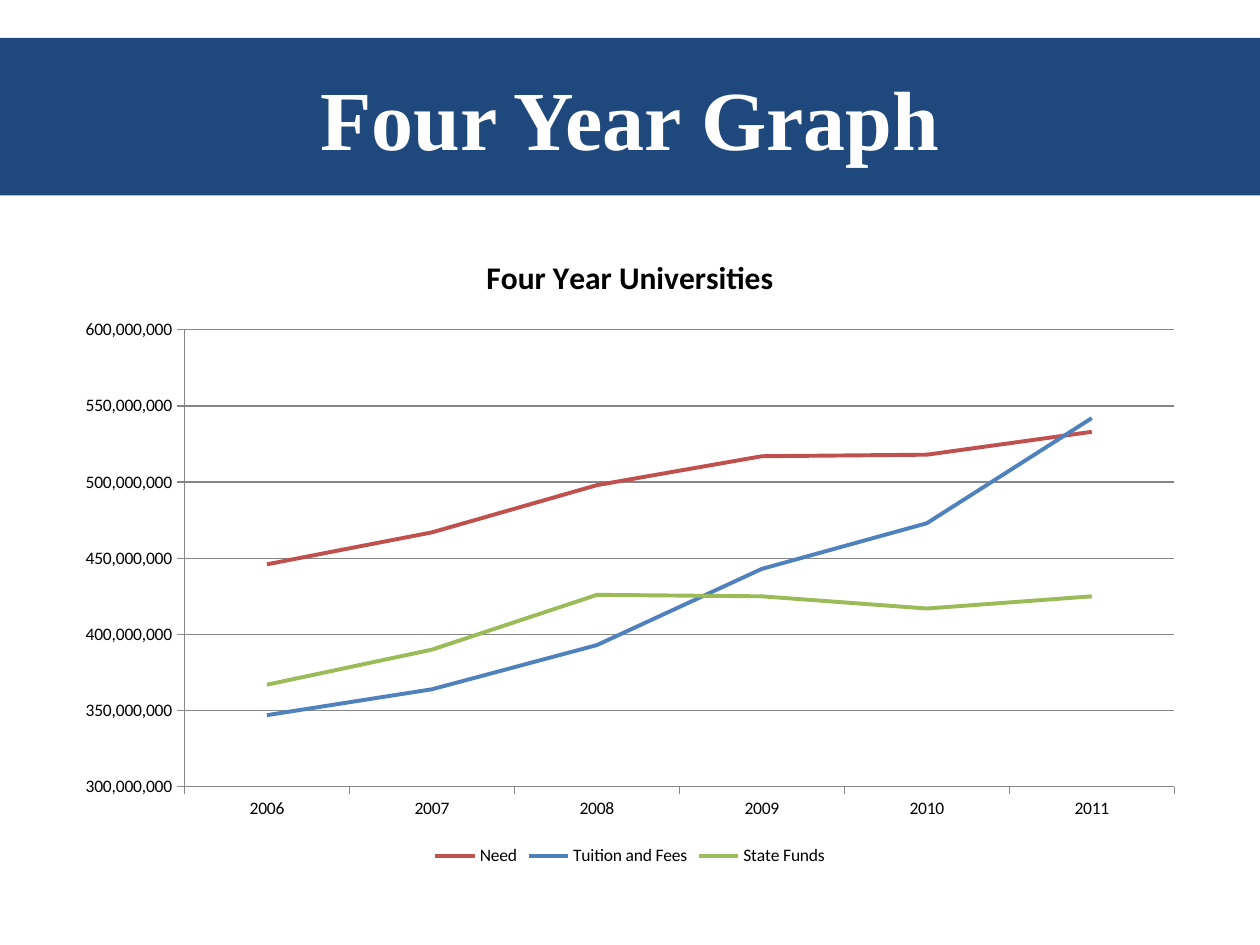
from pptx import Presentation
from pptx.chart.data import CategoryChartData
from pptx.dml.color import RGBColor
from pptx.enum.chart import XL_CHART_TYPE, XL_LEGEND_POSITION, XL_TICK_MARK
from pptx.enum.shapes import MSO_SHAPE
from pptx.enum.text import MSO_ANCHOR, PP_ALIGN
from pptx.util import Inches, Pt

LINE_CHART = XL_CHART_TYPE.LINE
BOTTOM = XL_LEGEND_POSITION.BOTTOM
TICK_OUT = XL_TICK_MARK.OUTSIDE
RECTANGLE = MSO_SHAPE.RECTANGLE
MIDDLE = MSO_ANCHOR.MIDDLE
CENTER = PP_ALIGN.CENTER

NAVY = "1F497D"
WHITE = "FFFFFF"
BLACK = "000000"
AXIS_GRAY = "868686"

YEARS = ["2006", "2007", "2008", "2009", "2010", "2011"]
MILLION = 1_000_000
# name, line colour, values in millions
FUNDING = [
    ("Need", "C0504D", [446, 467, 498, 517, 518, 533]),
    ("Tuition and Fees", "4F81BD", [347, 364, 393, 443, 473, 542]),
    ("State Funds", "9BBB59", [367, 390, 426, 425, 417, 425]),
]


def rgb(color):
    return RGBColor.from_string(color)


def style_font(font, name, size, color, bold=False):
    font.name = name
    font.size = Pt(size)
    font.color.rgb = rgb(color)
    font.bold = bold


def style_line(line, color, width):
    line.color.rgb = rgb(color)
    line.width = Pt(width)


def add_title_band(slide, left, top, width, height):
    band = slide.shapes.add_shape(
        RECTANGLE, Inches(left), Inches(top), Inches(width), Inches(height))
    band.shadow.inherit = False
    band.fill.solid()
    band.fill.fore_color.rgb = rgb(NAVY)
    band.line.fill.background()
    frame = band.text_frame
    frame.text = "Four Year Graph"
    frame.word_wrap = True
    frame.vertical_anchor = MIDDLE
    heading = frame.paragraphs[0]
    heading.alignment = CENTER
    style_font(heading.runs[0].font, "Times New Roman", 48, WHITE, bold=True)


def add_funding_chart(slide, left, top, width, height):
    funding_data = CategoryChartData(number_format="#,##0")
    funding_data.categories = YEARS
    for name, _, millions in FUNDING:
        funding_data.add_series(name, [value * MILLION for value in millions])
    chart = slide.shapes.add_chart(
        LINE_CHART, Inches(left), Inches(top), Inches(width), Inches(height),
        funding_data).chart
    style_font(chart.font, "Calibri", 10, BLACK)

    chart.has_title = True
    chart_title = chart.chart_title.text_frame
    chart_title.text = "Four Year Universities"
    style_font(chart_title.paragraphs[0].runs[0].font,
               "Calibri", 18, BLACK, bold=True)

    chart.has_legend = True
    chart.legend.position = BOTTOM
    chart.legend.include_in_layout = False

    amounts = chart.value_axis
    amounts.minimum_scale = 300 * MILLION
    amounts.maximum_scale = 600 * MILLION
    amounts.major_unit = 50 * MILLION
    amounts.tick_labels.number_format = "#,##0"
    amounts.tick_labels.number_format_is_linked = False
    amounts.has_major_gridlines = True
    style_line(amounts.major_gridlines.format.line, AXIS_GRAY, 0.75)
    for axis in (amounts, chart.category_axis):
        axis.major_tick_mark = TICK_OUT
        style_line(axis.format.line, AXIS_GRAY, 0.75)

    plot = chart.plots[0]
    plot.vary_by_categories = False
    for series, (_, color, _) in zip(plot.series, FUNDING):
        series.smooth = False
        style_line(series.format.line, color, 2.25)


def main():
    deck = Presentation()
    deck.slide_width = Inches(10)
    deck.slide_height = Inches(7.5)
    slide = deck.slides.add_slide(deck.slide_layouts[6])
    add_title_band(slide, 0, 0.3, 10, 1.25)
    add_funding_chart(slide, 0.5, 1.83, 9, 5.08)
    deck.save("out.pptx")


if __name__ == "__main__":
    main()
